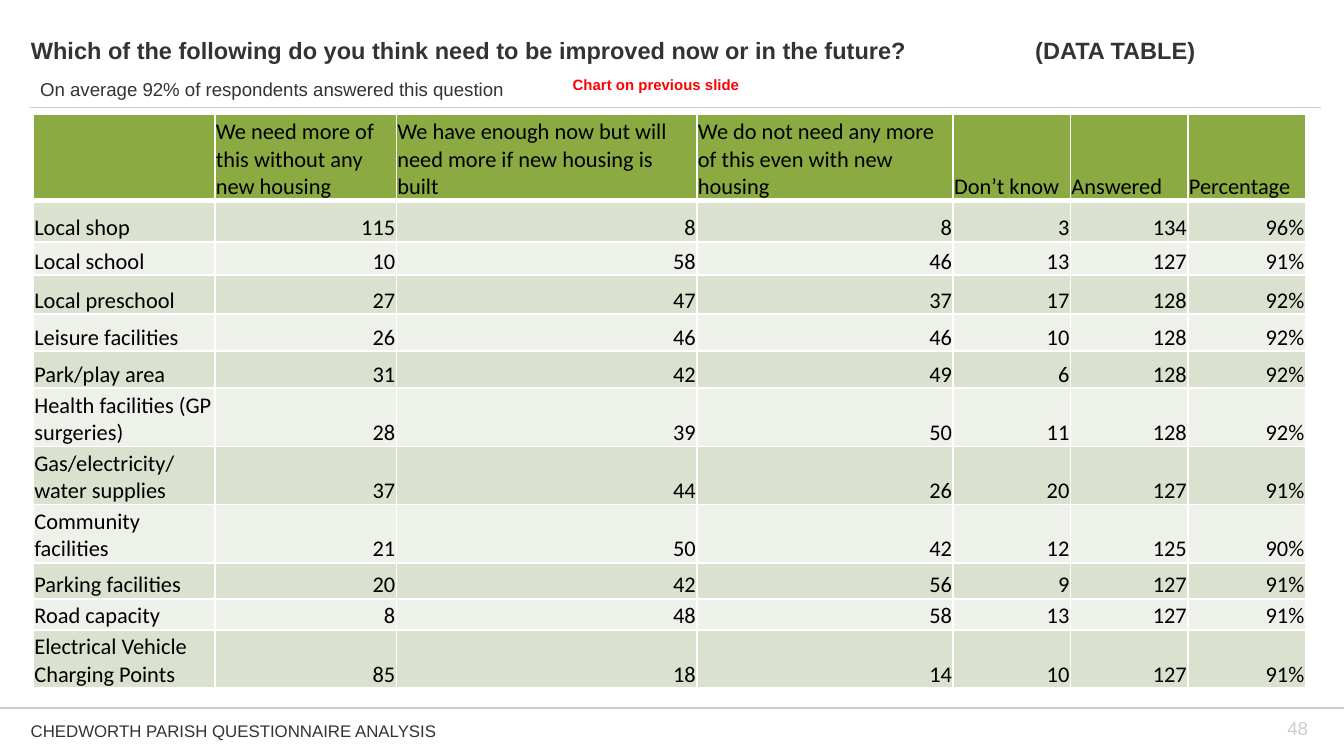
import dataclasses

import lxml.etree
import pptx
import pptx.dml.color
import pptx.enum.shapes
import pptx.enum.text
import pptx.oxml.ns
import pptx.util

Cm = pptx.util.Cm
Pt = pptx.util.Pt
Align = pptx.enum.text.PP_ALIGN
Anchor = pptx.enum.text.MSO_ANCHOR


@dataclasses.dataclass(frozen=True)
class Theme:
    heading_font: str = "Arial"
    table_font: str = "Calibri"
    white: str = "FFFFFF"
    text: str = "333333"
    table_text: str = "000000"
    rule: str = "CCCCCC"
    alert: str = "FF0000"
    header_fill: str = "8BAB42"
    band_fills: tuple = ("DAE2CF", "EEF1E9")
    title_size: float = 12.6
    body_size: float = 10
    footer_size: float = 9
    note_size: float = 8
    table_size: float = 12


HEADERS = (
    "",
    "We need more of this without any new housing",
    "We have enough now but will need more if new housing is built",
    "We do not need any more of this even with new housing",
    "Don’t know",
    "Answered",
    "Percentage",
)
ANSWERS = (
    ("Local shop", 115, 8, 8, 3, 134, "96%"),
    ("Local school", 10, 58, 46, 13, 127, "91%"),
    ("Local preschool", 27, 47, 37, 17, 128, "92%"),
    ("Leisure facilities", 26, 46, 46, 10, 128, "92%"),
    ("Park/play area", 31, 42, 49, 6, 128, "92%"),
    ("Health facilities (GP surgeries)", 28, 39, 50, 11, 128, "92%"),
    ("Gas/electricity/water supplies", 37, 44, 26, 20, 127, "91%"),
    ("Community facilities", 21, 50, 42, 12, 125, "90%"),
    ("Parking facilities", 20, 42, 56, 9, 127, "91%"),
    ("Road capacity", 8, 48, 58, 13, 127, "91%"),
    ("Electrical Vehicle Charging Points", 85, 18, 14, 10, 127, "91%"),
)
COLUMN_WIDTHS = (3.43, 3.43, 5.68, 4.84, 2.22, 2.22, 2.22)
ROW_HEIGHTS = (1.63, 0.78, 0.63, 0.74, 0.7, 0.7, 1.1, 1.1, 1.1, 0.68, 0.59, 1.1)


def rgb(color):
    return pptx.dml.color.RGBColor.from_string(color)


def add_element(parent, tag, **attributes):
    return lxml.etree.SubElement(parent, pptx.oxml.ns.qn(tag), **attributes)


class SlideBuilder:
    """Draws elements on one slide; every place and size is in centimetres."""

    def __init__(self, slide, theme):
        self.slide = slide
        self.theme = theme

    def format_paragraph(self, para, size, color, font=None, bold=False, align=Align.LEFT):
        para.alignment = align
        para.font.name = font or self.theme.heading_font
        para.font.size = Pt(size)
        para.font.bold = bold
        para.font.color.rgb = rgb(color)

    def title(self, text, left, top, width, height, tab):
        box = self.slide.shapes.title
        box.left, box.top, box.width, box.height = map(Cm, (left, top, width, height))
        frame = box.text_frame
        frame.text = text
        frame.vertical_anchor = Anchor.BOTTOM
        frame.auto_size = pptx.enum.text.MSO_AUTO_SIZE.NONE
        para = frame.paragraphs[0]
        tabs = add_element(para._p.get_or_add_pPr(), "a:tabLst")
        add_element(tabs, "a:tab", pos=str(int(Cm(tab))), algn="l")
        self.format_paragraph(para, self.theme.title_size, self.theme.text, bold=True)

    def text(self, text, left, top, width, height, size, color,
             anchor=Anchor.TOP, fill=None, **style):
        box = self.slide.shapes.add_textbox(*map(Cm, (left, top, width, height)))
        if fill:
            box.fill.solid()
            box.fill.fore_color.rgb = rgb(fill)
        frame = box.text_frame
        frame.word_wrap = True
        frame.vertical_anchor = anchor
        frame.text = text
        self.format_paragraph(frame.paragraphs[0], size, color, **style)

    def rule(self, left, right, y, weight):
        line = self.slide.shapes.add_connector(
            pptx.enum.shapes.MSO_CONNECTOR.STRAIGHT, Cm(left), Cm(y), Cm(right), Cm(y))
        line.line.color.rgb = rgb(self.theme.rule)
        line.line.width = Pt(weight)
        add_element(line._element.spPr, "a:effectLst")

    def borders(self, cell, top, bottom):
        """Draws white cell edges, 1 pt at the sides; goes before the cell's fill."""
        properties = cell._tc.get_or_add_tcPr()
        for side, weight in (("L", 1), ("R", 1), ("T", top), ("B", bottom)):
            edge = add_element(properties, f"a:ln{side}", w=str(int(Pt(weight))))
            fill = add_element(edge, "a:solidFill")
            add_element(fill, "a:srgbClr", val=self.theme.white)

    def table(self, rows, left, top, widths, heights):
        table = self.slide.shapes.add_table(
            len(rows), len(widths), Cm(left), Cm(top), Cm(sum(widths)), Cm(sum(heights))).table
        for column, width in zip(table.columns, widths):
            column.width = Cm(width)
        for index, (row, height, values) in enumerate(zip(table.rows, heights, rows)):
            row.height = Cm(height)
            fill = self.theme.band_fills[(index - 1) % 2] if index else self.theme.header_fill
            for column, (cell, value) in enumerate(zip(row.cells, values)):
                self.borders(cell, top=3 if index == 1 else 1, bottom=1 if index else 3)
                cell.fill.solid()
                cell.fill.fore_color.rgb = rgb(fill)
                cell.margin_left = cell.margin_right = cell.margin_top = Cm(0.02)
                cell.margin_bottom = 0
                cell.vertical_anchor = Anchor.BOTTOM
                cell.text = str(value)
                self.format_paragraph(
                    cell.text_frame.paragraphs[0], self.theme.table_size,
                    self.theme.table_text, font=self.theme.table_font,
                    align=Align.RIGHT if index and column else Align.LEFT)


def main():
    deck = pptx.Presentation()
    deck.slide_width, deck.slide_height = Cm(25.4), Cm(14.29)
    theme = Theme()
    builder = SlideBuilder(deck.slides.add_slide(deck.slide_layouts[5]), theme)

    builder.rule(0, 25.4, 13.39, 1)
    builder.rule(0.56, 24.97, 2.03, 0.5)
    builder.title(
        "Which of the following do you think need to be improved now or in the future?"
        "\t(DATA TABLE)", 0.33, 0.25, 24.66, 1.09, tab=18.98)
    builder.text("On average 92% of respondents answered this question",
                 0.51, 1.35, 14.81, 0.69, theme.body_size, theme.text)
    builder.text("48", 23.24, 13.39, 1.73, 0.76, theme.body_size, theme.rule,
                 anchor=Anchor.MIDDLE, align=Align.RIGHT)
    builder.text("CHEDWORTH PARISH QUESTIONNAIRE ANALYSIS",
                 0.33, 13.49, 8.28, 0.64, theme.footer_size, theme.text, fill=theme.white)
    builder.text("Chart on previous slide", 8.35, 1.3, 8.1, 0.61,
                 theme.note_size, theme.alert, bold=True, align=Align.CENTER)
    builder.table((HEADERS, *ANSWERS), 0.63, 2.16, COLUMN_WIDTHS, ROW_HEIGHTS)

    deck.save("out.pptx")


if __name__ == "__main__":
    main()
